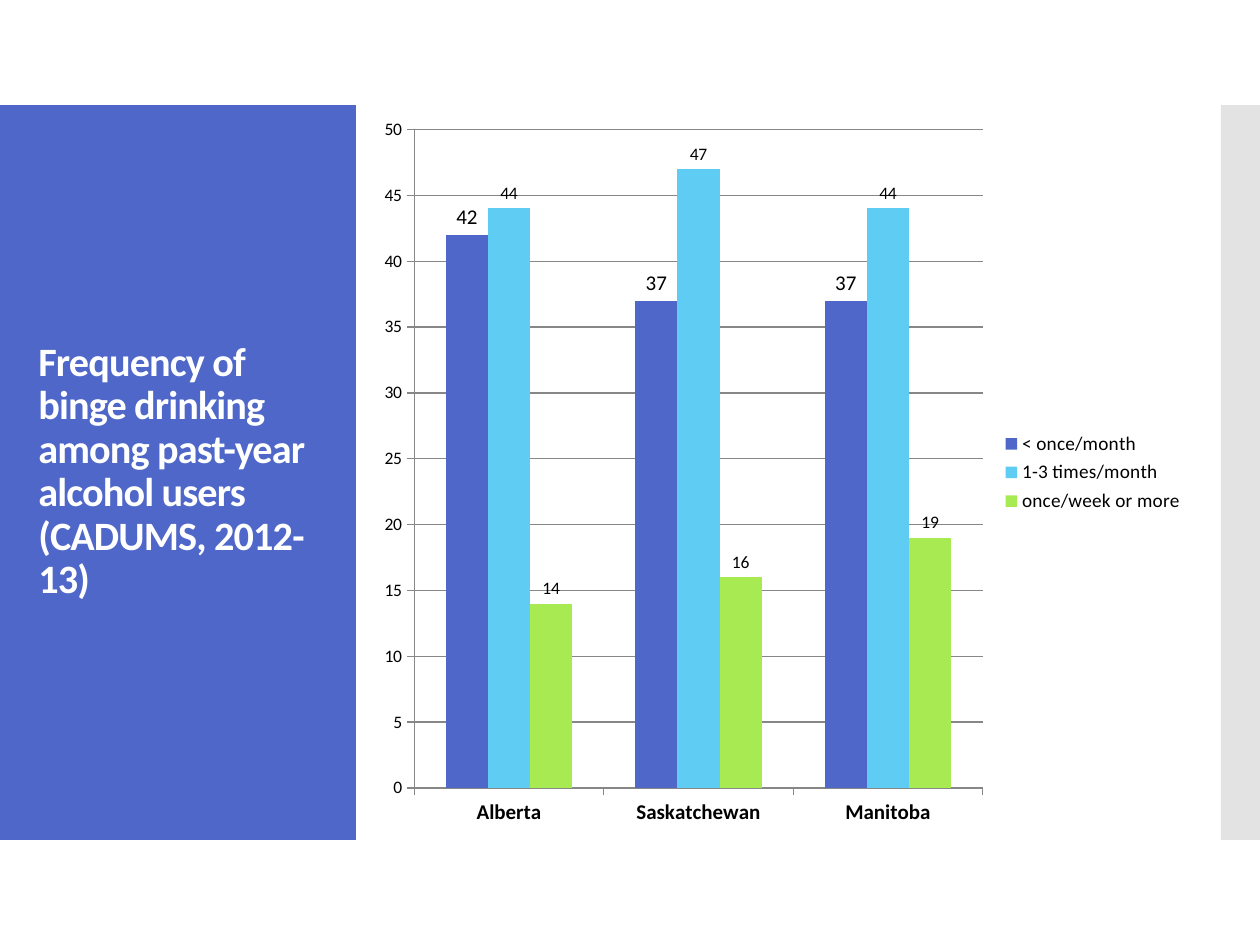
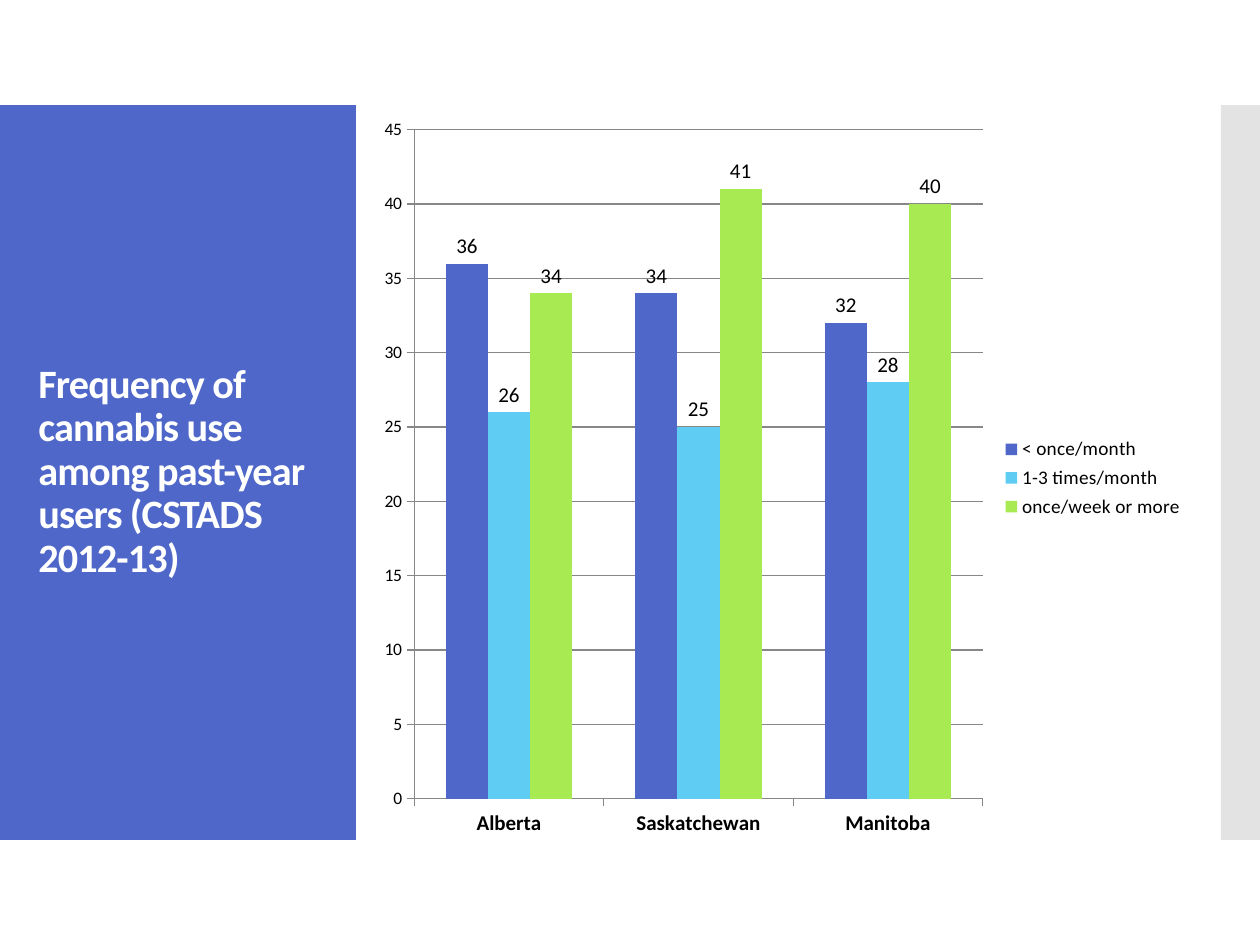
from lxml import etree
from pptx import Presentation
from pptx.chart.data import CategoryChartData
from pptx.dml.color import RGBColor
from pptx.enum.chart import XL_CHART_TYPE, XL_LABEL_POSITION, XL_LEGEND_POSITION, XL_TICK_MARK
from pptx.enum.shapes import MSO_SHAPE
from pptx.enum.text import MSO_ANCHOR
from pptx.oxml.ns import qn
from pptx.util import Emu, Pt

FONT = "Calibri"
COLORS = {
    "blue": "4E67C8",
    "sky": "5ECCF3",
    "green": "A7EA52",
    "edge": "C8C8C8",
    "grid": "878787",
    "white": "FFFFFF",
    "black": "000000",
}
PROVINCES = ["Alberta", "Saskatchewan", "Manitoba"]
FREQUENCIES = {"< once/month": "blue", "1-3 times/month": "sky", "once/week or more": "green"}
BAND_TOP, BAND_HEIGHT = 105, 735
# Left, width, colour and opacity in percent
BANDS = [(0, 356, "blue", 100), (1221, 39, "edge", 50)]

# Values and label sizes follow the order of FREQUENCIES
SURVEYS = [
    {
        "title": "Frequency of binge drinking among past-year alcohol users (CADUMS, 2012-13)",
        "values": [(42, 37, 37), (44, 47, 44), (14, 16, 19)],
        "label_sizes": [12, 10, 10],
        "axis_max": 50,
        "chart_height": 735,
    },
    {
        "title": "Frequency of cannabis use among past-year users (CSTADS 2012-13)",
        "values": [(36, 34, 32), (26, 25, 28), (34, 41, 40)],
        "label_sizes": [12, 12, 12],
        "axis_max": 45,
        "chart_height": 746,
    },
]


def px(*lengths):
    return [Emu(round(length * 914400 / 126)) for length in lengths]


def write(frame, text, size, color, bold=False, line_spacing=1.0, tracking=0):
    frame.word_wrap = True
    frame.vertical_anchor = MSO_ANCHOR.MIDDLE
    paragraph = frame.paragraphs[0]
    paragraph.line_spacing = line_spacing
    run = paragraph.add_run()
    run.text = text
    run.font.name = FONT
    run.font.size = Pt(size)
    run.font.bold = bold
    run.font.color.rgb = RGBColor.from_string(COLORS[color])
    run._r.get_or_add_rPr().set("spc", str(round(tracking * 100)))


deck = Presentation()
deck.slide_width, deck.slide_height = px(1260, 945)

for survey in SURVEYS:
    slide = deck.slides.add_slide(deck.slide_layouts[6])

    # Side bands
    for left, width, color, opacity in BANDS:
        band = slide.shapes.add_shape(
            MSO_SHAPE.RECTANGLE, *px(left, BAND_TOP, width, BAND_HEIGHT))
        band.shadow.inherit = False
        band.fill.solid()
        band.fill.fore_color.rgb = RGBColor.from_string(COLORS[color])
        band.line.fill.background()
        if opacity < 100:
            tint = band._element.spPr.find(".//" + qn("a:srgbClr"))
            etree.SubElement(tint, qn("a:alpha")).set("val", str(opacity * 1000))

    # Title
    title = slide.shapes.add_textbox(*px(26, 155, 305, 634))
    write(title.text_frame, survey["title"], size=23, color="white", bold=True,
          line_spacing=0.9, tracking=-0.5)

    # Chart
    data = CategoryChartData()
    data.categories = PROVINCES
    for frequency, values in zip(FREQUENCIES, survey["values"]):
        data.add_series(frequency, values)
    chart = slide.shapes.add_chart(
        XL_CHART_TYPE.COLUMN_CLUSTERED,
        *px(368, BAND_TOP, 829, survey["chart_height"]), data).chart
    chart.has_title = False
    chart.font.name = FONT
    chart.font.size = Pt(10)
    chart.font.color.rgb = RGBColor.from_string(COLORS["black"])

    # Legend
    chart.has_legend = True
    chart.legend.position = XL_LEGEND_POSITION.RIGHT
    chart.legend.include_in_layout = False
    chart.legend.font.size = Pt(11)

    # Axes
    provinces, percent = chart.category_axis, chart.value_axis
    provinces.tick_labels.font.size = Pt(12)
    provinces.tick_labels.font.bold = True
    percent.minimum_scale = 0
    percent.maximum_scale = survey["axis_max"]
    percent.major_unit = 5
    percent.has_major_gridlines = True
    for axis in (provinces, percent):
        axis.major_tick_mark = XL_TICK_MARK.OUTSIDE
    for rule in (provinces, percent, percent.major_gridlines):
        rule.format.line.width = Pt(0.75)
        rule.format.line.color.rgb = RGBColor.from_string(COLORS["grid"])

    # Columns and their values
    columns = chart.plots[0]
    columns.gap_width = 150
    columns.overlap = 0
    columns.vary_by_categories = False
    for series, color, size in zip(columns.series, FREQUENCIES.values(), survey["label_sizes"]):
        series.format.fill.solid()
        series.format.fill.fore_color.rgb = RGBColor.from_string(COLORS[color])
        series.invert_if_negative = False
        labels = series.data_labels
        labels.show_value = True
        labels.position = XL_LABEL_POSITION.OUTSIDE_END
        labels.font.size = Pt(size)

deck.save("out.pptx")
